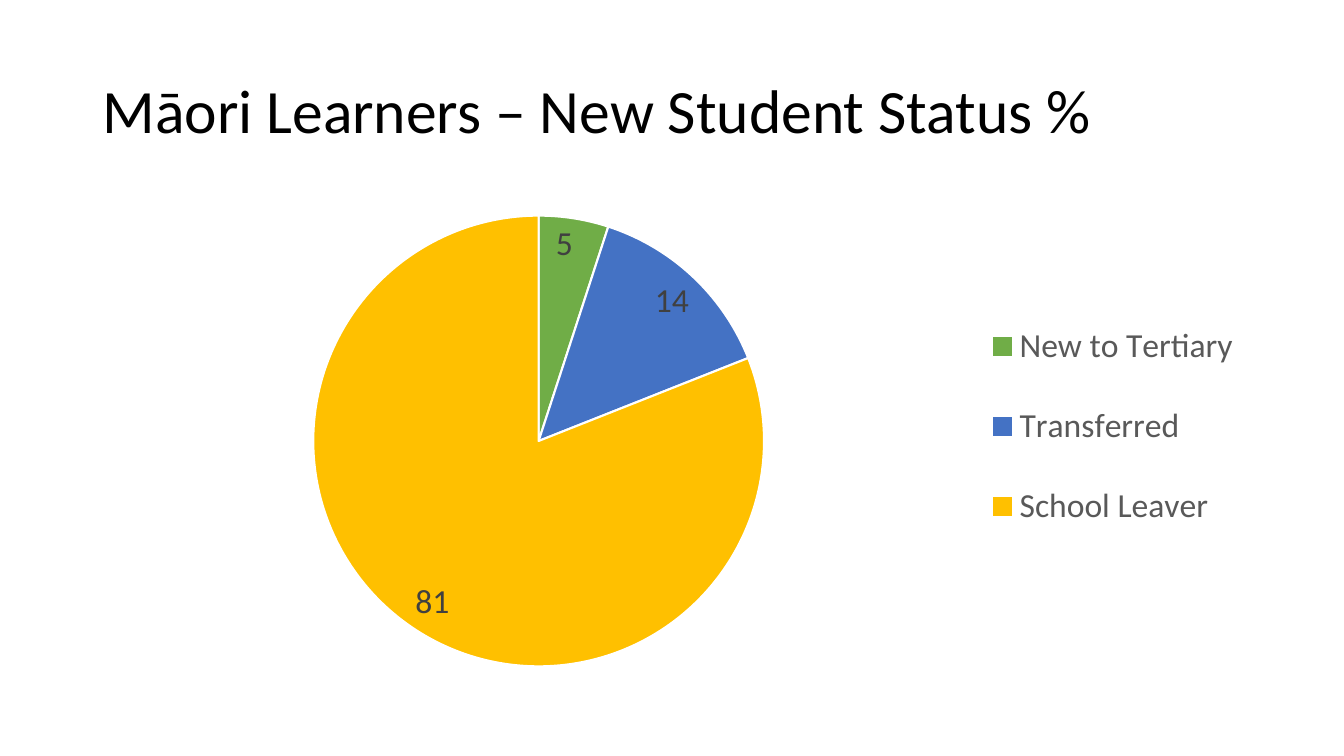
from dataclasses import dataclass

from lxml import etree
from pptx import Presentation
from pptx.chart.data import CategoryChartData
from pptx.dml.color import RGBColor
from pptx.enum.chart import XL_CHART_TYPE, XL_LABEL_POSITION, XL_LEGEND_POSITION
from pptx.enum.text import MSO_ANCHOR, MSO_AUTO_SIZE, PP_ALIGN
from pptx.oxml.ns import qn
from pptx.util import Pt

PIE = XL_CHART_TYPE.PIE
INSIDE_END = XL_LABEL_POSITION.INSIDE_END
LEGEND_RIGHT = XL_LEGEND_POSITION.RIGHT
MIDDLE = MSO_ANCHOR.MIDDLE
NO_AUTOFIT = MSO_AUTO_SIZE.NONE
LEFT = PP_ALIGN.LEFT
TITLE_ONLY = 5


@dataclass(frozen=True)
class Theme:
    font: str = "Calibri"
    title_size: int = 44
    chart_size: int = 24
    title_color: str = "000000"
    label_color: str = "404040"
    legend_color: str = "595959"
    background: str = "FFFFFF"


class StatusSlide:
    """Holds the theme and the current slide, and adds styled elements to it."""

    def __init__(self, deck, theme):
        self.theme = theme
        self.slide = deck.slides.add_slide(deck.slide_layouts[TITLE_ONLY])
        self.fill(self.slide.background.fill, theme.background)

    def fill(self, target, color):
        target.solid()
        target.fore_color.rgb = RGBColor.from_string(color)

    def style(self, font, size, color):
        font.name = self.theme.font
        font.size = Pt(size)
        font.color.rgb = RGBColor.from_string(color)

    def title(self, wording, left, top, width, height):
        heading = self.slide.shapes.title
        heading.left, heading.top = Pt(left), Pt(top)
        heading.width, heading.height = Pt(width), Pt(height)
        frame = heading.text_frame
        frame.text = wording
        frame.word_wrap = True
        frame.auto_size = NO_AUTOFIT
        frame.vertical_anchor = MIDDLE
        line = frame.paragraphs[0]
        line.alignment = LEFT
        line.line_spacing = 0.9
        self.style(line.runs[0].font, self.theme.title_size, self.theme.title_color)

    def place(self, part, index, **settings):
        for old_layout in part.findall(qn("c:layout")):
            part.remove(old_layout)
        layout = etree.Element(qn("c:layout"))
        manual = etree.SubElement(layout, qn("c:manualLayout"))
        for tag, value in settings.items():
            etree.SubElement(manual, qn(f"c:{tag}")).set("val", str(value))
        part.insert(index, layout)

    def pie(self, shares, left, top, width, height):
        data = CategoryChartData(number_format="0")
        data.categories = [status for status, _, _ in shares]
        data.add_series("Series 1", [percent for _, percent, _ in shares])
        chart = self.slide.shapes.add_chart(
            PIE, Pt(left), Pt(top), Pt(width), Pt(height), data
        ).chart
        self.style(chart.font, self.theme.chart_size, self.theme.legend_color)
        chart.has_title = False

        plot = chart.plots[0]
        plot.vary_by_categories = True
        for index, (_, _, color) in enumerate(shares):
            slice_format = plot.series[0].points[index].format
            self.fill(slice_format.fill, color)
            self.fill(slice_format.line.fill, self.theme.background)
            slice_format.line.width = Pt(1.5)

        plot.has_data_labels = True
        labels = plot.data_labels
        labels.show_value = True
        labels.show_percentage = False
        labels.number_format = "0"
        labels.number_format_is_linked = False
        labels.position = INSIDE_END
        self.style(labels.font, self.theme.chart_size, self.theme.label_color)

        chart.has_legend = True
        legend = chart.legend
        legend.position = LEGEND_RIGHT
        legend.include_in_layout = False
        self.style(legend.font, self.theme.chart_size, self.theme.legend_color)

        area = chart.element.find(".//" + qn("c:plotArea"))
        self.place(area, 0, layoutTarget="inner", xMode="edge", yMode="edge",
                   x=0.19, y=0.03, w=0.39, h=0.94)
        key = chart.element.find(".//" + qn("c:legend"))
        self.place(key, 1, xMode="edge", yMode="edge",
                   x=0.77, y=0.18, w=0.22, h=0.58)


def main():
    deck = Presentation()
    deck.slide_width, deck.slide_height = Pt(960), Pt(540)
    status = StatusSlide(deck, Theme())
    status.title("Māori Learners – New Student Status %", 66, 28.75, 828, 104.4)
    shares = [
        ("New to Tertiary", 5, "70AD47"),
        ("Transferred", 14, "4472C4"),
        ("School Leaver", 81, "FFC000"),
    ]
    status.pie(shares, 66, 143.75, 828, 342.6)
    deck.save("out.pptx")


if __name__ == "__main__":
    main()
